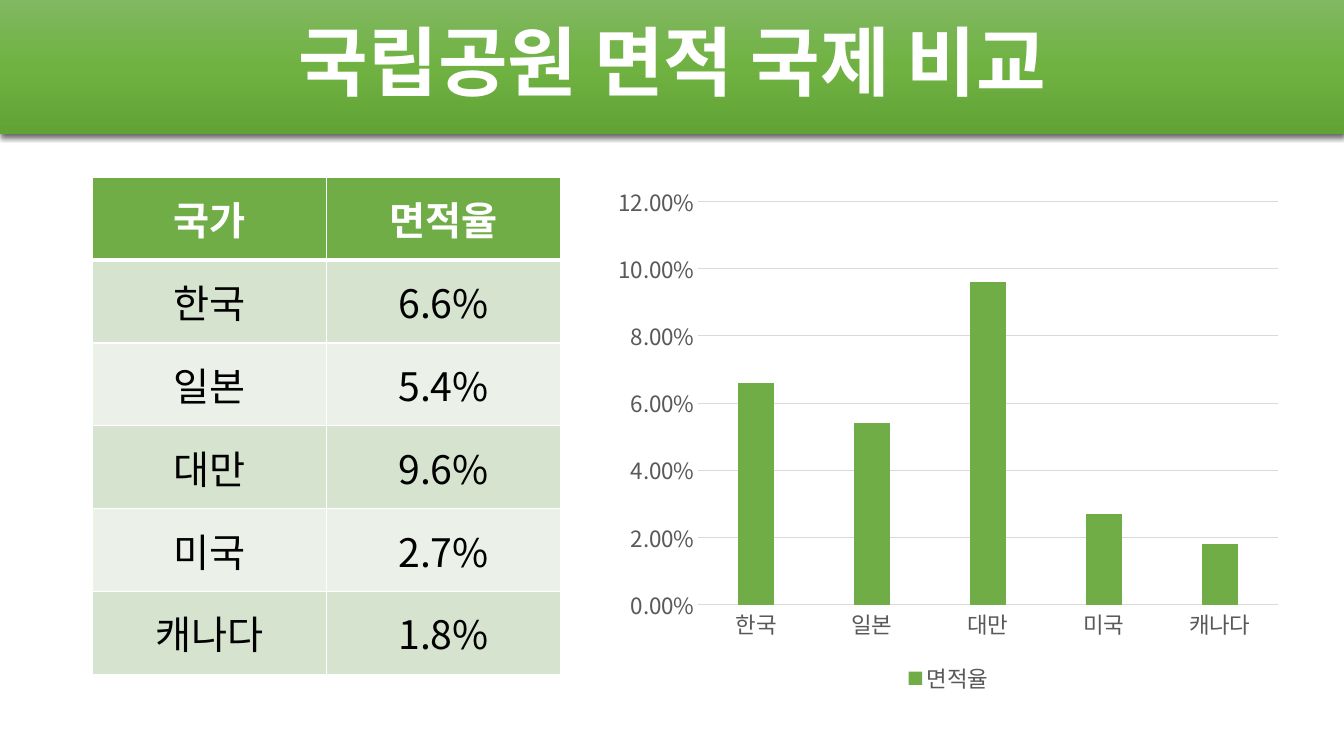
from copy import deepcopy

from lxml import etree
from pptx import Presentation
from pptx.chart.data import CategoryChartData
from pptx.dml.color import RGBColor
from pptx.enum.chart import XL_CHART_TYPE, XL_LEGEND_POSITION, XL_TICK_MARK
from pptx.enum.shapes import MSO_SHAPE
from pptx.enum.text import MSO_ANCHOR, PP_ALIGN
from pptx.oxml.ns import qn
from pptx.util import Pt

COLUMN_CLUSTERED = XL_CHART_TYPE.COLUMN_CLUSTERED
LEGEND_BOTTOM = XL_LEGEND_POSITION.BOTTOM
NO_TICK = XL_TICK_MARK.NONE
RECTANGLE = MSO_SHAPE.RECTANGLE
MIDDLE = MSO_ANCHOR.MIDDLE
CENTER = PP_ALIGN.CENTER

WHITE = RGBColor(0xFF, 0xFF, 0xFF)
BLACK = RGBColor(0x00, 0x00, 0x00)
GREEN = RGBColor(0x70, 0xAD, 0x47)
BAND_GREENS = (RGBColor(0x81, 0xB8, 0x61), RGBColor(0x6F, 0xB2, 0x42), RGBColor(0x62, 0xA3, 0x36))
ROW_FILLS = (RGBColor(0xD5, 0xE3, 0xCF), RGBColor(0xEB, 0xF1, 0xE9))
GRID_GRAY = RGBColor(0xD9, 0xD9, 0xD9)
LABEL_GRAY = RGBColor(0x59, 0x59, 0x59)

FONT = "Noto Sans CJK KR"
EMU_PER_PX = 9144  # 100 px to the inch
SLIDE_WIDTH, SLIDE_HEIGHT = 1333, 750

HEADERS = ("국가", "면적율")
AREA_PERCENT = {"한국": 6.6, "일본": 5.4, "대만": 9.6, "미국": 2.7, "캐나다": 1.8}


def px(*lengths):
    return [length * EMU_PER_PX for length in lengths]


def format_font(font, size, color, bold=False):
    font.name = FONT
    font.size = Pt(size)
    font.bold = bold
    font.color.rgb = color


def set_east_asian_font(element):
    for latin in list(element.iter(qn("a:latin"))):
        east_asian = etree.Element(qn("a:ea"), typeface=FONT)
        latin.addnext(east_asian)


def write_text(text_frame, text, size, color, bold=False, line_spacing=None):
    paragraph = text_frame.paragraphs[0]
    paragraph.alignment = CENTER
    paragraph.line_spacing = line_spacing
    run = paragraph.add_run()
    run.text = text
    format_font(run.font, size, color, bold)
    set_east_asian_font(run._r)


def add_title_band(slide, box):
    band = slide.shapes.add_shape(RECTANGLE, *px(*box))
    band.line.fill.background()

    # Three-stop vertical gradient
    band.fill.gradient()
    band.fill.gradient_angle = 270
    stop_list = band._element.spPr.find(".//" + qn("a:gsLst"))
    stop_list.append(deepcopy(stop_list[-1]))
    for stop, color, position in zip(band.fill.gradient_stops, BAND_GREENS, (0, 0.5, 1)):
        stop.color.rgb = color
        stop.position = position

    # Soft shadow below the band
    band.shadow.inherit = False
    effects = band._element.spPr.find(qn("a:effectLst"))
    shadow = etree.SubElement(effects, qn("a:outerShdw"), blurRad=str(Pt(4.5)),
                              dist=str(Pt(1.5)), dir="5400000", algn="ctr", rotWithShape="0")
    shadow_color = etree.SubElement(shadow, qn("a:srgbClr"), val=str(BLACK))
    etree.SubElement(shadow_color, qn("a:alpha"), val="63000")

    # The title stands in front of the band
    title = slide.shapes.title
    band._element.addnext(title._element)
    left, top, width, height = box
    title.left, title.top, title.width, title.height = px(left + 92, top - 1, 1150, height)
    title.text_frame.vertical_anchor = MIDDLE
    write_text(title.text_frame, "국립공원 면적 국제 비교", 54, WHITE, bold=True, line_spacing=0.9)


def set_cell_borders(cell, widths):
    properties = cell._tc.get_or_add_tcPr()
    for index, (side, width) in enumerate(widths.items()):
        line = etree.Element(qn("a:ln" + side), w=str(Pt(width)))
        fill = etree.SubElement(line, qn("a:solidFill"))
        etree.SubElement(fill, qn("a:srgbClr"), val=str(WHITE))
        properties.insert(index, line)


def add_area_table(slide, box):
    rows = [HEADERS] + [(country, f"{percent}%") for country, percent in AREA_PERCENT.items()]
    table = slide.shapes.add_table(len(rows), len(HEADERS), *px(*box)).table
    for row_index, row in enumerate(rows):
        is_header = row_index == 0
        for column_index, text in enumerate(row):
            cell = table.cell(row_index, column_index)
            cell.vertical_anchor = MIDDLE
            cell.fill.solid()
            cell.fill.fore_color.rgb = GREEN if is_header else ROW_FILLS[(row_index - 1) % 2]
            set_cell_borders(cell, {"L": 1, "R": 1, "T": 3 if row_index == 1 else 1,
                                    "B": 3 if is_header else 1})
            write_text(cell.text_frame, text, 28, WHITE if is_header else BLACK, bold=is_header)


def add_area_chart(slide, box):
    data = CategoryChartData(number_format="0.00%")
    data.categories = list(AREA_PERCENT)
    data.add_series(HEADERS[1], [round(percent / 100, 3) for percent in AREA_PERCENT.values()])
    chart = slide.shapes.add_chart(COLUMN_CLUSTERED, *px(*box), data).chart
    chart.has_title = False
    format_font(chart.font, 16, BLACK)

    # Columns
    plot = chart.plots[0]
    plot.gap_width = 219
    plot.overlap = -27
    plot.vary_by_categories = False
    series = plot.series[0]
    series.format.fill.solid()
    series.format.fill.fore_color.rgb = GREEN

    # Axes
    category_axis, value_axis = chart.category_axis, chart.value_axis
    for axis in (category_axis, value_axis):
        axis.major_tick_mark = axis.minor_tick_mark = NO_TICK
        format_font(axis.tick_labels.font, 16, LABEL_GRAY)
    value_axis.minimum_scale, value_axis.maximum_scale, value_axis.major_unit = 0, 0.12, 0.02
    value_axis.tick_labels.number_format = "0.00%"
    value_axis.tick_labels.number_format_is_linked = False
    value_axis.format.line.fill.background()
    for line in (category_axis.format.line, value_axis.major_gridlines.format.line):
        line.color.rgb = GRID_GRAY
        line.width = Pt(0.75)

    # Legend
    chart.has_legend = True
    chart.legend.position = LEGEND_BOTTOM
    chart.legend.include_in_layout = False
    format_font(chart.legend.font, 16, LABEL_GRAY)
    set_east_asian_font(chart._chartSpace)


def main():
    presentation = Presentation()
    presentation.slide_width, presentation.slide_height = px(SLIDE_WIDTH, SLIDE_HEIGHT)
    slide = presentation.slides.add_slide(presentation.slide_layouts.get_by_name("Title Only"))
    add_title_band(slide, (0, 0, SLIDE_WIDTH, 133))
    add_area_table(slide, (92, 176, 464, 493))
    add_area_chart(slide, (600, 174, 681, 519))
    presentation.save("out.pptx")


if __name__ == "__main__":
    main()
